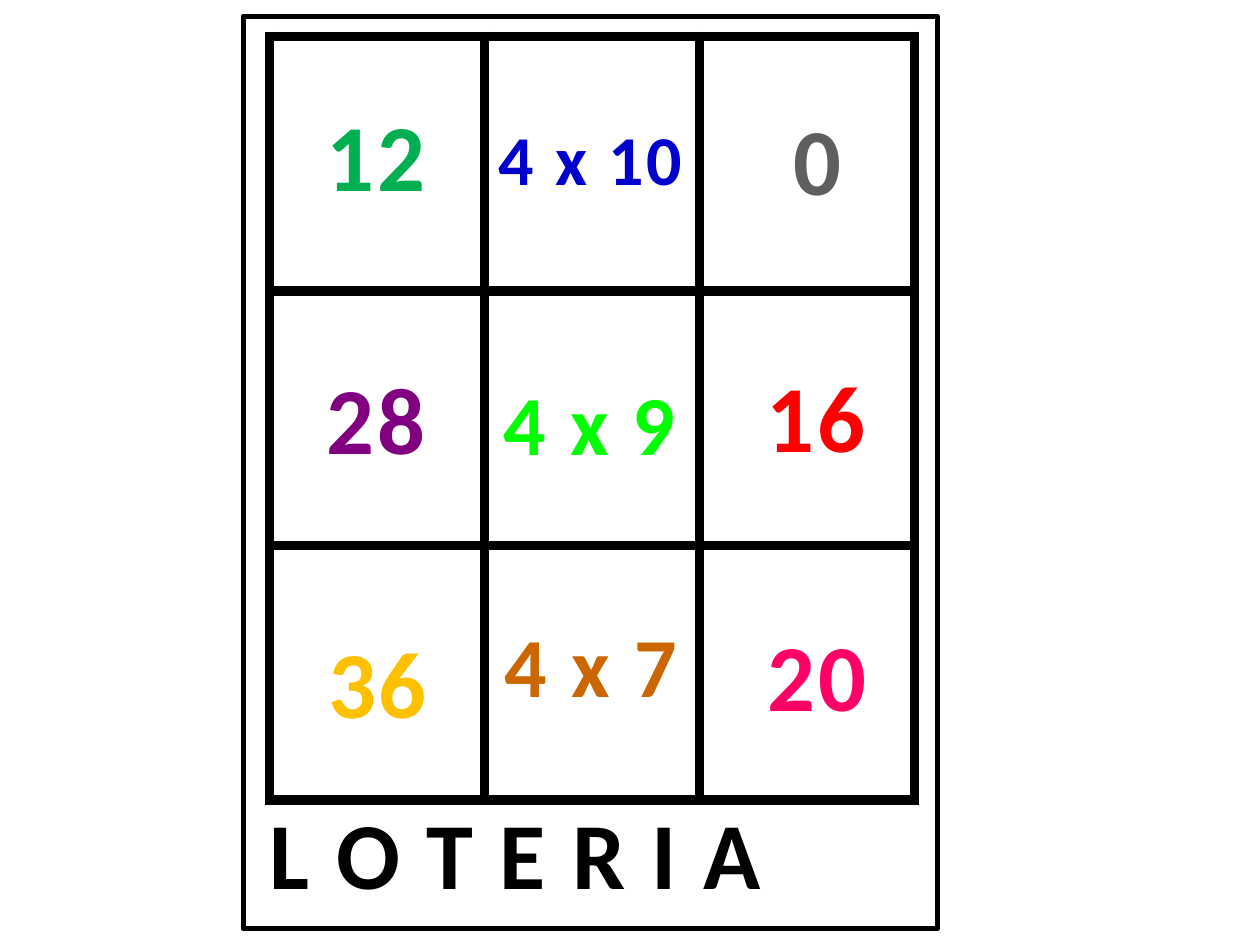
"""Build a lottery card for the four times table."""
from lxml import etree
from pptx import Presentation
from pptx import util as u
from pptx.dml.color import RGBColor
from pptx.enum import shapes, text
from pptx.oxml import ns

PX = 9144
BLACK = RGBColor(0, 0, 0)
GREEN = RGBColor(0, 176, 80)
BLUE = RGBColor(0, 0, 204)
GRAY = RGBColor(95, 95, 95)
PURPLE = RGBColor(128, 0, 128)
LIME = RGBColor(0, 255, 0)
RED = RGBColor(255, 0, 0)
GOLD = RGBColor(255, 192, 0)
BROWN = RGBColor(204, 102, 0)
PINK = RGBColor(255, 0, 102)

LABELS = [
    ("12", GREEN, 54, (248, 72, 101, 101)),
    ("4 x 10", BLUE, 40, (384, 87, 169, 77)),
    ("0", GRAY, 54, (618, 75, 61, 101)),
    ("28", PURPLE, 54, (248, 281, 101, 101)),
    ("4 x 9", LIME, 48, (388, 290, 160, 91)),
    ("16", RED, 54, (597, 279, 101, 101)),
    ("36", GOLD, 54, (249, 490, 101, 101)),
    ("4 x 7", BROWN, 48, (389, 482, 160, 91)),
    ("20", PINK, 54, (598, 485, 101, 101)),
]


def scale(*vals):
    """Turn px into EMU."""
    return [u.Emu(val * PX) for val in vals]


def edge(cell, side):
    """Draw one black side of a cell."""
    line = etree.SubElement(cell, ns.qn(f"a:ln{side}"), w=str(u.Pt(6)))
    fill = etree.SubElement(line, ns.qn("a:solidFill"))
    etree.SubElement(fill, ns.qn("a:srgbClr"), val=str(BLACK))


def add_grid(slide, box, count):
    """Add the square grid of empty cells."""
    table = slide.shapes.add_table(count, count, *scale(*box)).table
    table.first_row = table.horz_banding = False
    for cell in table.iter_cells():
        props = cell._tc.get_or_add_tcPr()
        for side in "LRTB":
            edge(props, side)
        cell.fill.background()


def add_frame(slide, box):
    """Add the outline of the card."""
    frame = slide.shapes.add_shape(shapes.MSO_SHAPE.RECTANGLE, *scale(*box))
    frame.shadow.inherit = False
    frame.fill.background()
    frame.line.color.rgb = BLACK
    frame.line.width = u.Pt(3)


def write(shape, words, color, size):
    """Fill a shape with one bold, spaced and centred line."""
    frame = shape.text_frame
    frame.word_wrap = False
    frame.auto_size = text.MSO_AUTO_SIZE.SHAPE_TO_FIT_TEXT
    frame.vertical_anchor = text.MSO_ANCHOR.TOP
    para = frame.paragraphs[0]
    para.alignment = text.PP_ALIGN.CENTER
    run = para.add_run()
    run.text = words
    font = run.font
    font.name, font.size, font.bold = "Calibri", u.Pt(size), True
    font.color.rgb = color
    run._r.get_or_add_rPr().set("spc", "150")


def set_title(slide, words, box):
    """Place the name of the game in the title."""
    title = slide.shapes.title
    title.left, title.top, title.width, title.height = scale(*box)
    write(title, words, BLACK, 54)


def add_label(slide, words, color, size, box):
    """Add one number or product."""
    write(slide.shapes.add_textbox(*scale(*box)), words, color, size)


def main():
    """Build and save the card."""
    deck = Presentation()
    deck.slide_width, deck.slide_height = scale(1000, 750)
    slide = deck.slides.add_slide(deck.slide_layouts[5])
    add_grid(slide, (214, 29, 512, 606), 3)
    set_title(slide, "L O T E R I A", (201, 626, 417, 101))
    add_frame(slide, (193, 13, 551, 724))
    for label in LABELS:
        add_label(slide, *label)
    deck.save("out.pptx")


if __name__ == "__main__":
    main()
